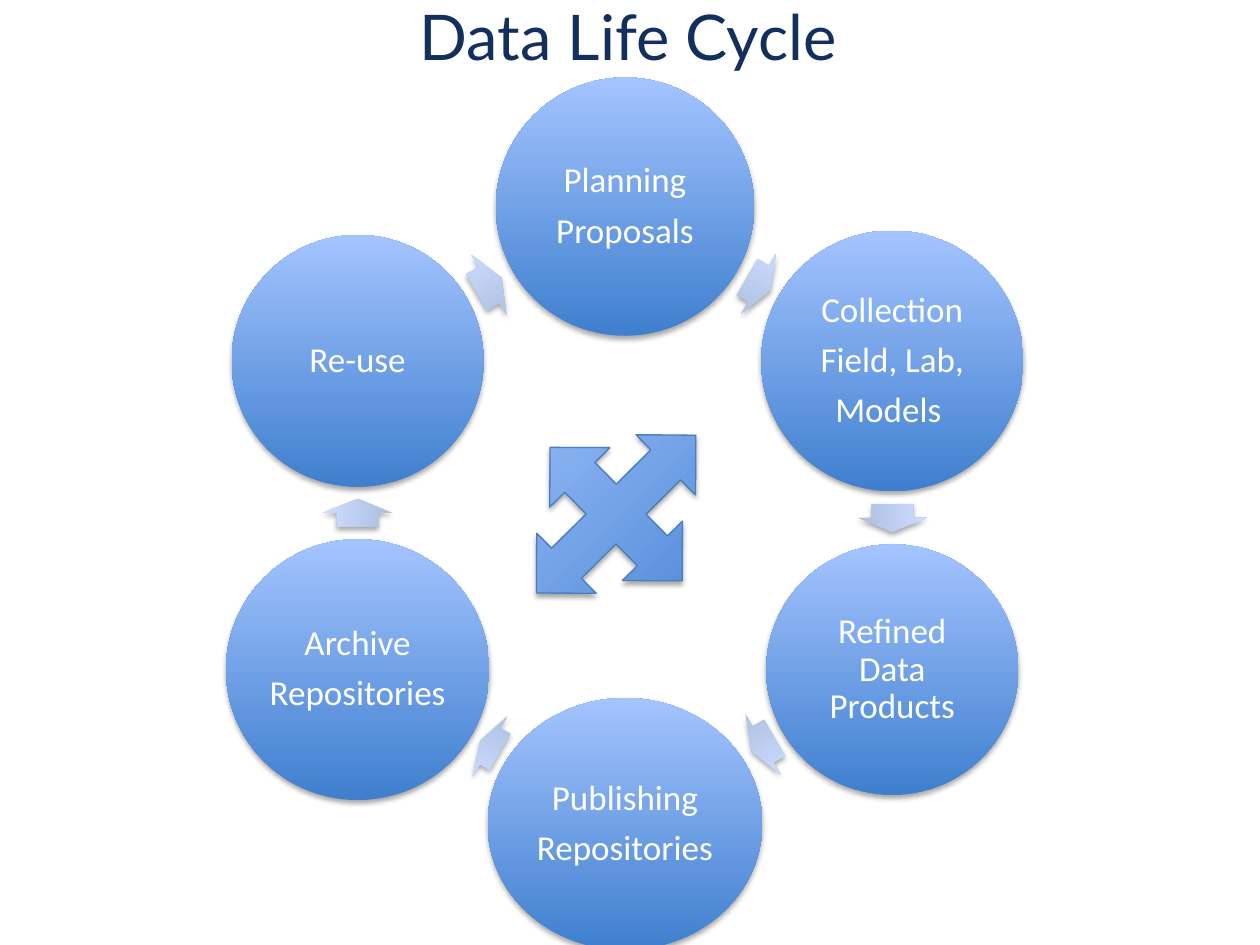
from math import cos, radians, sin

from lxml import etree
from pptx import Presentation
from pptx.dml.color import RGBColor
from pptx.enum.shapes import MSO_SHAPE as Preset
from pptx.enum.text import MSO_ANCHOR as Anchor, PP_ALIGN as Align
from pptx.oxml.ns import qn
from pptx.util import Inches, Pt

COLORS = {
    "title": "122F5E", "text": "FFFFFF", "shadow": "000000",
    "stage_dark": "3F7FCE", "stage_light": "A4C4FF",
    "step_dark": "ADBFE1", "step_light": "CCDDFF",
    "outline": "4B7EBC",
}


def write_text(frame, text, *, font, size, color, inset=None,
               line_spacing=None, space_after=None):
    """Fill a frame with centred paragraphs, one for each line of text."""
    frame.word_wrap = True
    frame.vertical_anchor = Anchor.MIDDLE
    if inset is not None:
        frame.margin_left = frame.margin_right = Inches(inset)
        frame.margin_top = frame.margin_bottom = Inches(inset)
    for index, line in enumerate(text.split("\n")):
        paragraph = frame.add_paragraph() if index else frame.paragraphs[0]
        paragraph.alignment = Align.CENTER
        paragraph.line_spacing = line_spacing
        paragraph.space_after = space_after
        run = paragraph.add_run()
        run.text = line
        run.font.name = font
        run.font.size = Pt(size)
        run.font.color.rgb = RGBColor.from_string(COLORS[color])


def add_glossy(preset, center_x, center_y, width, height, tone, rotation=0):
    """Add a centred shape with an upward gradient and a soft shadow."""
    shape = slide.shapes.add_shape(
        preset, Inches(center_x - width / 2), Inches(center_y - height / 2),
        Inches(width), Inches(height))
    shape.rotation = rotation
    shape.fill.gradient()
    shape.fill.gradient_angle = 90
    for stop, shade in zip(shape.fill.gradient_stops, ("dark", "light")):
        stop.color.rgb = RGBColor.from_string(COLORS[f"{tone}_{shade}"])
    shape.line.fill.background()
    shape.shadow.inherit = False
    effects = shape._element.spPr.find(qn("a:effectLst"))
    shadow = etree.SubElement(
        effects, qn("a:outerShdw"), blurRad=str(Pt(3.1)), dist=str(Pt(1.8)),
        dir="5400000", rotWithShape="0")
    shade = etree.SubElement(shadow, qn("a:srgbClr"), val=COLORS["shadow"])
    etree.SubElement(shade, qn("a:alpha"), val="35000")
    return shape


presentation = Presentation()
presentation.slide_width = Inches(10)
presentation.slide_height = Inches(7.5)
slide = presentation.slides.add_slide(presentation.slide_layouts[5])

# Title
title = slide.shapes.title
title.left, title.top = Inches(0.15), Inches(0)
title.width, title.height = Inches(9.67), Inches(0.56)
write_text(title.text_frame, "Data Life Cycle",
           font="Lato", size=36, color="title")

# Ring of stages, clockwise from the top, each followed by a step arrow
RING_X, RING_Y, RADIUS = 4.96, 4.09, 2.45
STEP_RADIUS = RADIUS * cos(radians(30))
# text, stage width and height, arrow length, arrow shift along its direction
stages = [
    ("Planning\nProposals", 2.05, 2.05, 0.21, 0),
    ("Collection\nField, Lab,\nModels ", 2.08, 2.07, 0.22, 0.02),
    ("Refined Data Products", 2, 1.99, 0.21, -0.04),
    ("Publishing\nRepositories", 2.18, 2, 0.18, 0.01),
    ("Archive\nRepositories", 2.09, 2.07, 0.22, 0.02),
    ("Re-use", 2, 2, 0.23, -0.02),
]
for index, (text, width, height, length, shift) in enumerate(stages):
    angle = radians(60 * index)
    stage = add_glossy(Preset.OVAL, RING_X + RADIUS * sin(angle),
                       RING_Y - RADIUS * cos(angle), width, height, "stage")
    write_text(stage.text_frame, text, font="Calibri", size=20, color="text",
               inset=0.03, line_spacing=0.9, space_after=Pt(7))

    heading = 60 * index + 30
    turn = radians(heading)
    step = add_glossy(
        Preset.RIGHT_ARROW,
        RING_X + STEP_RADIUS * sin(turn) + shift * cos(turn),
        RING_Y - STEP_RADIUS * cos(turn) + shift * sin(turn),
        length, 0.55, "step", heading)
    step.adjustments[0] = 0.6
    step.adjustments[1] = 0.5

# Crossing arrows in the middle
exchange = add_glossy(Preset.QUAD_ARROW, 4.89, 4.08, 1.78, 1.49, "stage", 315.3)
exchange.line.color.rgb = RGBColor.from_string(COLORS["outline"])
exchange.line.width = Pt(0.75)

presentation.save("out.pptx")
